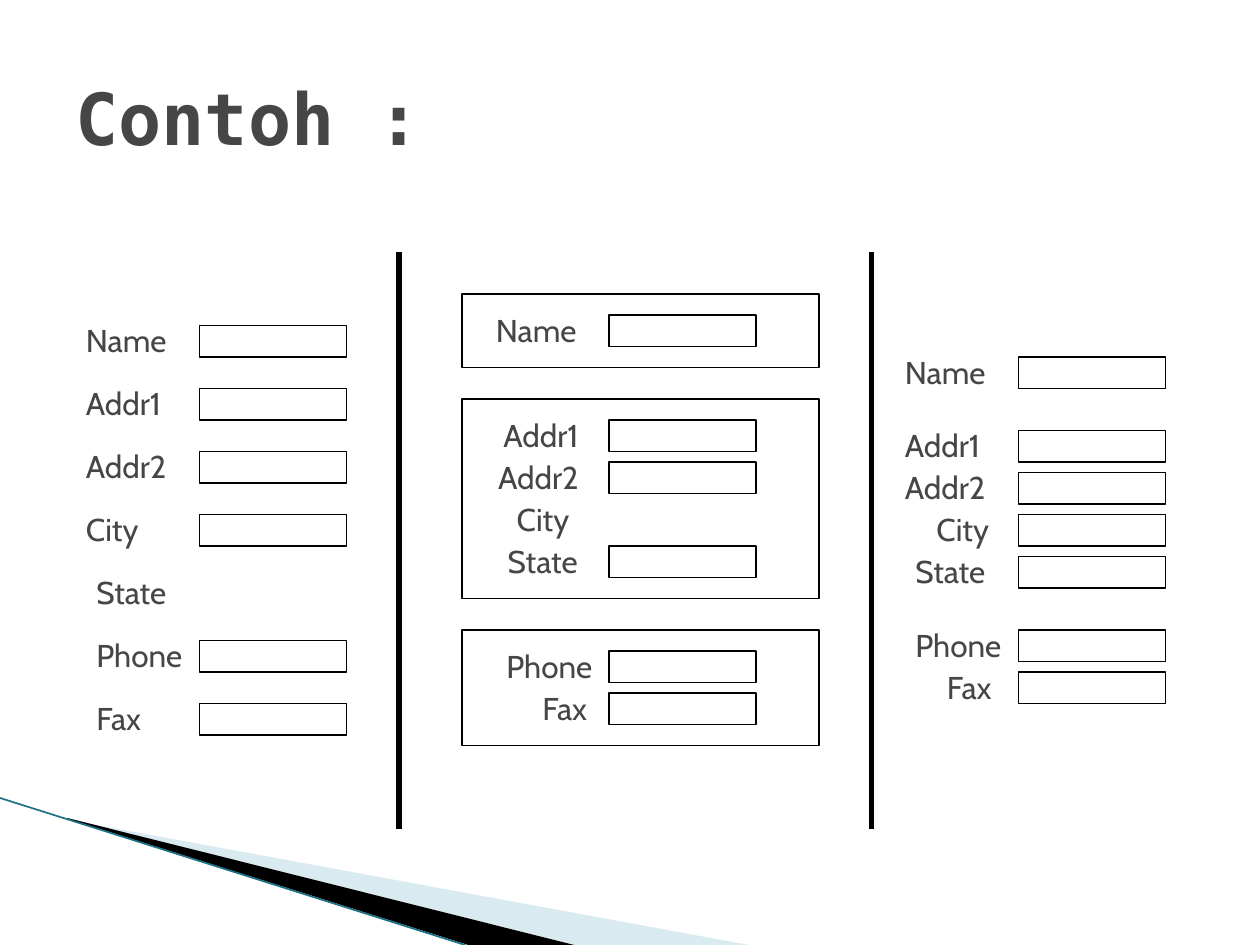
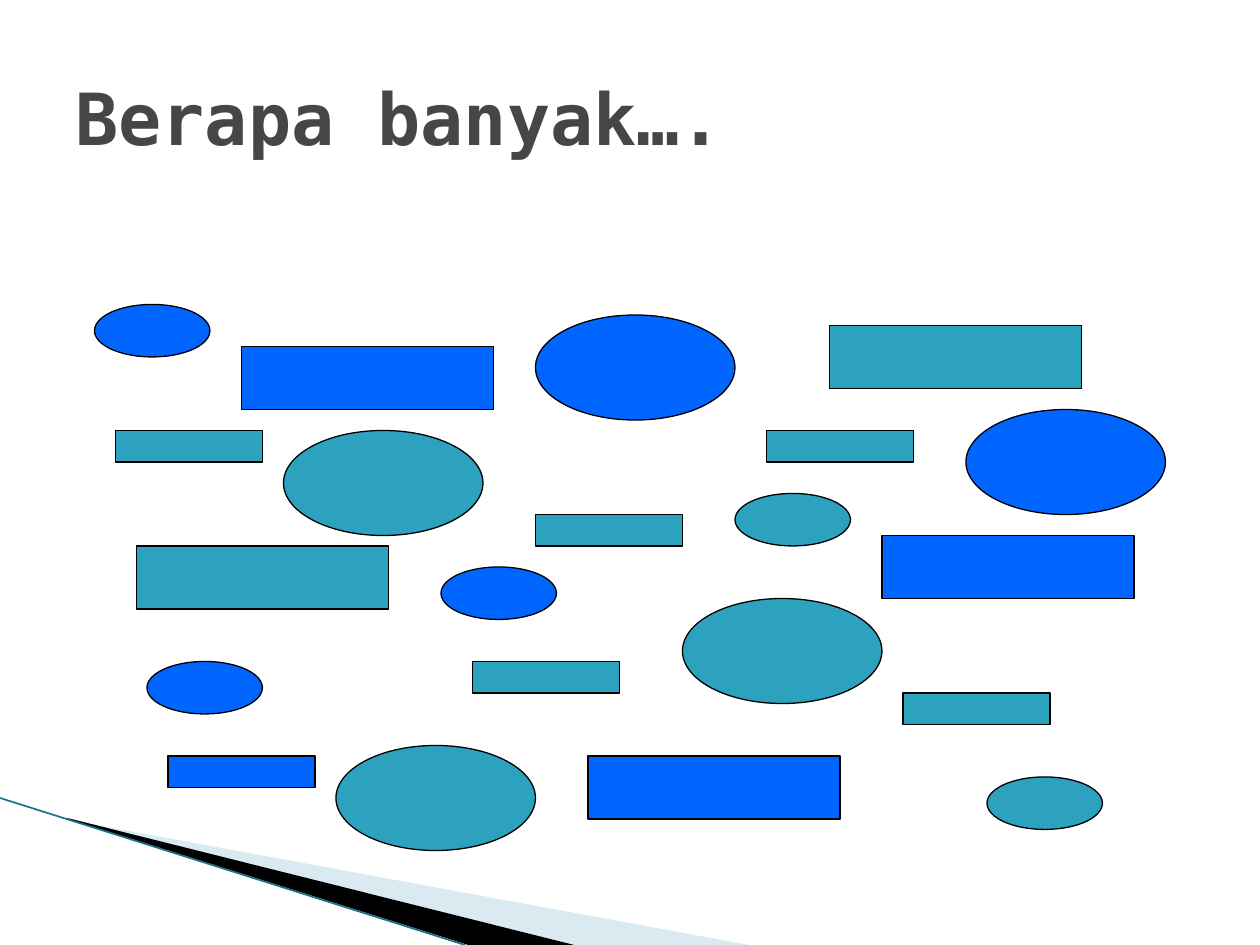
from lxml.etree import SubElement
from pptx import Presentation
from pptx.dml.color import RGBColor
from pptx.enum.shapes import MSO_CONNECTOR, MSO_SHAPE
from pptx.enum.text import MSO_ANCHOR, MSO_AUTO_SIZE, PP_ALIGN
from pptx.oxml.ns import qn
from pptx.util import Emu, Inches, Pt

COLUMNS, ROWS = 120, 90
INK, BLACK, WHITE = "464646", "000000", "FFFFFF"
BLUE, TEAL, PALE, EDGE = "0066FF", "2DA2BF", "A0CBDC", "1B7187"

TITLE_FONT = {"name": "DejaVu Sans Mono", "size": Pt(41), "bold": True}
LABEL_FONT = {"name": "Cabin", "size": Pt(18), "bold": False}
TITLE_FRAME = {"word_wrap": True, "vertical_anchor": MSO_ANCHOR.MIDDLE}
LABEL_FRAME = {"word_wrap": False, "auto_size": MSO_AUTO_SIZE.SHAPE_TO_FIT_TEXT}

LABEL_WIDTHS = {"Name": 10.1, "Addr1": 10.3, "Addr2": 10.3, "City": 7.4,
                "State": 9.2, "Phone": 10.6, "Fax": 7.1}
LABEL_HEIGHT = 4.8
FIELD_SIZE = (14, 3)
GROUP_SIZES = (1, 4, 2)


def color(value):
    return RGBColor.from_string(value)


def apply_format(target, values):
    for name, value in values.items():
        setattr(target, name, value)


class SlideBuilder:
    def __init__(self):
        self.presentation = Presentation()
        apply_format(self.presentation,
                     {"slide_width": Inches(10), "slide_height": Inches(7.5)})
        self.cell_width = self.presentation.slide_width / COLUMNS
        self.cell_height = self.presentation.slide_height / ROWS
        self.slide = None

    def place(self, column, row):
        return Emu(round(column * self.cell_width)), Emu(round(row * self.cell_height))

    def add_slide(self, title):
        self.slide = self.presentation.slides.add_slide(self.presentation.slide_layouts[6])
        self.wedge([(6.6, 78.1), (71.3, 90), (54.7, 90), (6.6, 78)], PALE, 40)
        self.wedge([(6.4, 77.9), (54.7, 90), (44.6, 90), (6.5, 78)], BLACK)
        self.line((0, 76), (44.3, 90), EDGE, 0.95)
        self.text(title, (6, 3.6), (108, 15), TITLE_FONT, TITLE_FRAME)

    def wedge(self, points, fill, opacity=100):
        start, *others = [self.place(*point) for point in points]
        builder = self.slide.shapes.build_freeform(*start)
        builder.add_line_segments(others)
        shape = builder.convert_to_shape()
        self.paint(shape, fill)
        if opacity < 100:
            fill_color = next(shape.fill._xPr.iter(qn("a:srgbClr")))
            SubElement(fill_color, qn("a:alpha"), val=str(opacity * 1000))

    def paint(self, shape, fill, line_width=None):
        shape.shadow.inherit = False
        if fill:
            shape.fill.solid()
            shape.fill.fore_color.rgb = color(fill)
        else:
            shape.fill.background()
        if line_width:
            shape.line.color.rgb = color(BLACK)
            shape.line.width = Pt(line_width)
        else:
            shape.line.fill.background()

    def shape(self, kind, position, size, fill, line_width=1):
        shape = self.slide.shapes.add_shape(kind, *self.place(*position), *self.place(*size))
        self.paint(shape, fill, line_width)

    def line(self, start, end, line_color, width):
        connector = self.slide.shapes.add_connector(
            MSO_CONNECTOR.STRAIGHT, *self.place(*start), *self.place(*end))
        connector.line.color.rgb = color(line_color)
        connector.line.width = Pt(width)
        SubElement(connector._element.spPr, qn("a:effectLst"))

    def text(self, words, position, size, font, frame_format, alignment=PP_ALIGN.LEFT):
        shape = self.slide.shapes.add_textbox(*self.place(*position), *self.place(*size))
        apply_format(shape.text_frame, frame_format)
        paragraph = shape.text_frame.paragraphs[0]
        paragraph.text = words
        paragraph.alignment = alignment
        apply_format(paragraph.font, font)
        paragraph.font.color.rgb = color(INK)

    def form(self, label_columns, label_rows, field_column, missing=None,
             alignment=PP_ALIGN.LEFT):
        for label, column, row in zip(LABEL_WIDTHS, label_columns, label_rows):
            if label != missing:
                self.shape(MSO_SHAPE.RECTANGLE, (field_column, row + 1), FIELD_SIZE, WHITE)
            self.text(label, (column, row), (LABEL_WIDTHS[label], LABEL_HEIGHT),
                      LABEL_FONT, LABEL_FRAME, alignment)


def grouped_rows(top, gap):
    rows = []
    for size in GROUP_SIZES:
        rows += [top + 4 * index for index in range(size)]
        top += 4 * size + gap
    return rows


def build_form_comparison(builder):
    builder.add_slide("Contoh :")
    builder.form([7] * 4 + [8] * 3, range(30, 67, 6), 19, missing="State")
    framed_rows = grouped_rows(29, 6)
    builder.form([46, 46, 46, 48, 47, 47, 50], framed_rows, 58,
                 missing="City", alignment=PP_ALIGN.RIGHT)
    first = 0
    for size in GROUP_SIZES:
        builder.shape(MSO_SHAPE.RECTANGLE, (44, framed_rows[first] - 1),
                      (34, 4 * size + 3), None)
        first += size
    builder.form([85, 85, 85, 88, 86, 86, 89], grouped_rows(33, 3), 97)
    for column in (38, 83):
        builder.line((column, 24), (column, 79), BLACK, 3)


def build_counting_puzzle(builder):
    builder.add_slide("Berapa banyak….")
    rectangle, ellipse = MSO_SHAPE.RECTANGLE, MSO_SHAPE.OVAL
    scattered_shapes = [
        (rectangle, (24, 6), BLUE, [(23, 33), (56, 72), (84, 51)]),
        (rectangle, (24, 6), TEAL, [(13, 52), (79, 31)]),
        (rectangle, (14, 3), TEAL, [(11, 41), (51, 49), (86, 66), (45, 63), (73, 41)]),
        (rectangle, (14, 3), BLUE, [(16, 72)]),
        (ellipse, (19, 10), BLUE, [(51, 30), (92, 39)]),
        (ellipse, (19, 10), TEAL, [(27, 41), (32, 71), (65, 57)]),
        (ellipse, (11, 5), BLUE, [(9, 29), (42, 54), (14, 63)]),
        (ellipse, (11, 5), TEAL, [(94, 74), (70, 47)]),
    ]
    for kind, size, fill, positions in scattered_shapes:
        for position in positions:
            builder.shape(kind, position, size, fill, 0.75)


def main():
    builder = SlideBuilder()
    build_form_comparison(builder)
    build_counting_puzzle(builder)
    builder.presentation.save("out.pptx")


if __name__ == "__main__":
    main()
